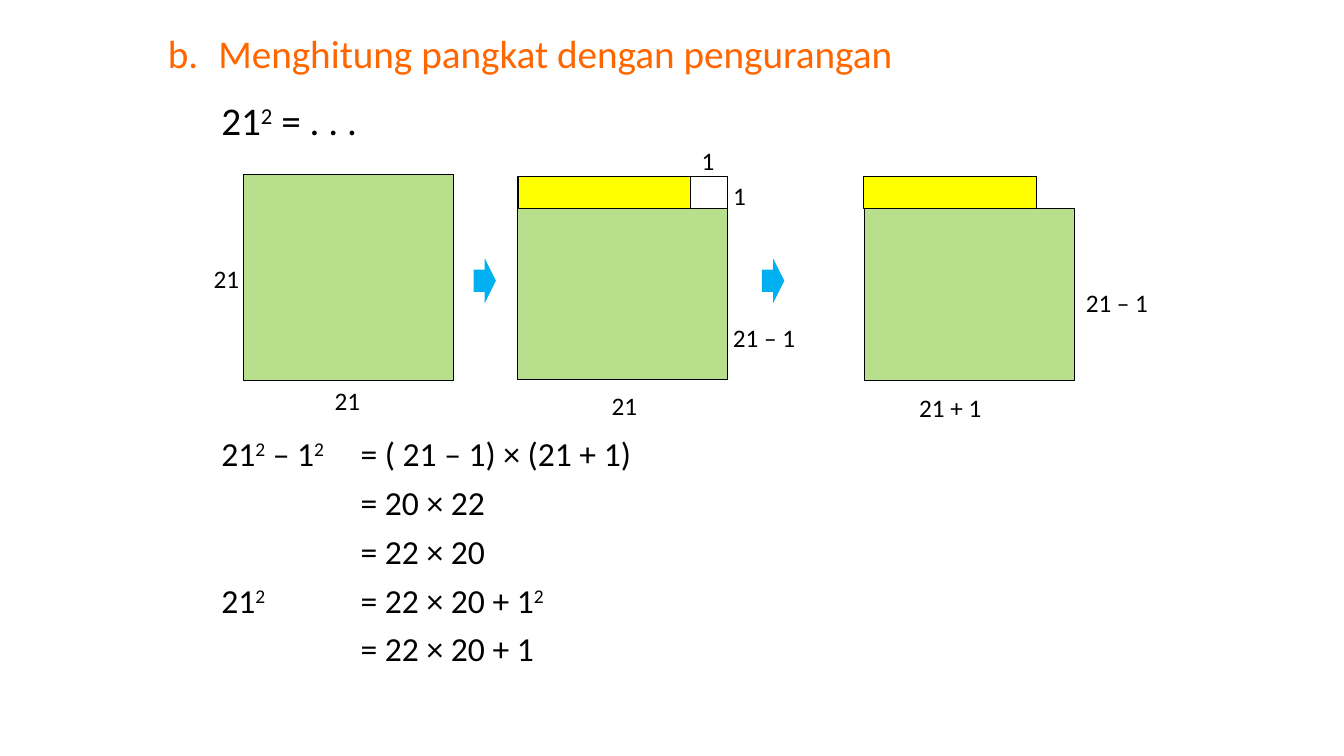
from lxml import etree
from pptx import Presentation
from pptx.dml.color import RGBColor
from pptx.enum.shapes import MSO_SHAPE
from pptx.enum.text import MSO_ANCHOR, MSO_AUTO_SIZE, PP_ALIGN
from pptx.oxml.ns import qn
from pptx.util import Pt

RECTANGLE, RIGHT_ARROW = MSO_SHAPE.RECTANGLE, MSO_SHAPE.RIGHT_ARROW
TOP, LEFT, NO_AUTO_SIZE = MSO_ANCHOR.TOP, PP_ALIGN.LEFT, MSO_AUTO_SIZE.NONE

FONT = "Calibri"
BLACK, ORANGE, WHITE = "000000", "FF6600", "FFFFFF"
GREEN, YELLOW, BLUE = "B8E08C", "FFFF00", "00B0F0"

SIDE, STRIP_WIDTH, STRIP_HEIGHT = 150, 123.5, 23
STRIP_TOP = 126
MIDDLE_LEFT, RIGHT_LEFT = 370, 617.5

EQUATIONS = [
    "21^2^ – 1^2^\t= ( 21 – 1) × (21 + 1)",
    "\t= 20 × 22",
    "\t= 22 × 20",
    "21^2^\t= 22 × 20 + 1^2^",
    "\t= 22 × 20 + 1",
]

# text, left, top, width
LABELS = [
    ("21", 232, 271.5, 33),
    ("21", 145.5, 184.5, 33),
    ("21 – 1", 516.5, 227, 64),
    ("1", 516.5, 125.5, 24),
    ("1", 494, 100, 24),
    ("21", 429.75, 275, 33),
    ("21 – 1", 768.5, 201.5, 64),
    ("21 + 1", 649.5, 276.5, 60),
]


def rgb(color):
    return RGBColor.from_string(color)


def place(shape, left, top, width, height):
    shape.left, shape.top = Pt(left), Pt(top)
    shape.width, shape.height = Pt(width), Pt(height)


def set_tab(para, position):
    tabs = etree.SubElement(para._p.get_or_add_pPr(), qn("a:tabLst"))
    etree.SubElement(tabs, qn("a:tab"), pos=str(Pt(position)), algn="l")


def write(shape, lines, size=18, color=BLACK, tab=None, gap=0, wrap=True):
    """Fill a shape with lines; text between carets is superscript."""
    frame = shape.text_frame
    frame.word_wrap = wrap
    frame.auto_size = NO_AUTO_SIZE
    frame.vertical_anchor = TOP
    for index, line in enumerate(lines):
        para = frame.add_paragraph() if index else frame.paragraphs[0]
        if tab:
            set_tab(para, tab)
        para.alignment = LEFT
        para.space_before = Pt(gap if index else 0)
        for part, text in enumerate(line.split("^")):
            if not text:
                continue
            span = para.add_run()
            span.text = text
            span.font.name = FONT
            span.font.size = Pt(size)
            span.font.color.rgb = rgb(color)
            if part % 2:
                span.font._element.set("baseline", "30000")


def add_text(slide, lines, left, top, width, height, **style):
    box = slide.shapes.add_textbox(Pt(left), Pt(top), Pt(width), Pt(height))
    write(box, lines, **style)


def add_figure(slide, kind, left, top, width, height, fill, line=BLACK):
    figure = slide.shapes.add_shape(kind, Pt(left), Pt(top), Pt(width), Pt(height))
    figure.shadow.inherit = False
    figure.fill.solid()
    figure.fill.fore_color.rgb = rgb(fill)
    if line:
        figure.line.color.rgb = rgb(line)
        figure.line.width = Pt(0.75)
    else:
        figure.line.fill.background()


def add_squares(slide):
    add_figure(slide, RECTANGLE, 173.75, 124.5, SIDE, 147, GREEN)
    add_figure(slide, RECTANGLE, MIDDLE_LEFT, STRIP_TOP, SIDE, 145, GREEN)
    add_figure(slide, RECTANGLE, MIDDLE_LEFT + STRIP_WIDTH, STRIP_TOP,
               SIDE - STRIP_WIDTH, STRIP_HEIGHT, WHITE)
    add_figure(slide, RECTANGLE, RIGHT_LEFT, STRIP_TOP + STRIP_HEIGHT, SIDE, 122.5, GREEN)
    for left in (MIDDLE_LEFT, RIGHT_LEFT - 0.75):
        add_figure(slide, RECTANGLE, left, STRIP_TOP, STRIP_WIDTH, STRIP_HEIGHT, YELLOW)
    for left in (338.25, 544.25):
        add_figure(slide, RIGHT_ARROW, left, 184.5, 16, 32, BLUE, line=None)


def main():
    deck = Presentation()
    deck.slide_width, deck.slide_height = Pt(960), Pt(540)
    slide = deck.slides.add_slide(deck.slide_layouts[5])
    title = slide.shapes.title
    place(title, 112.75, 17.5, 538, 41)
    write(title, ["b.\tMenghitung pangkat dengan pengurangan"],
          size=28, color=ORANGE, tab=36)

    add_text(slide, ["21^2^ = . . ."], 151, 65.5, 130, 41, size=28)
    add_squares(slide)
    for text, left, top, width in LABELS:
        add_text(slide, [text], left, top, width, 29, wrap=False)
    add_text(slide, EQUATIONS, 151, 306, 312, 177, size=24, tab=99.5, gap=6)

    deck.save("out.pptx")


if __name__ == "__main__":
    main()
